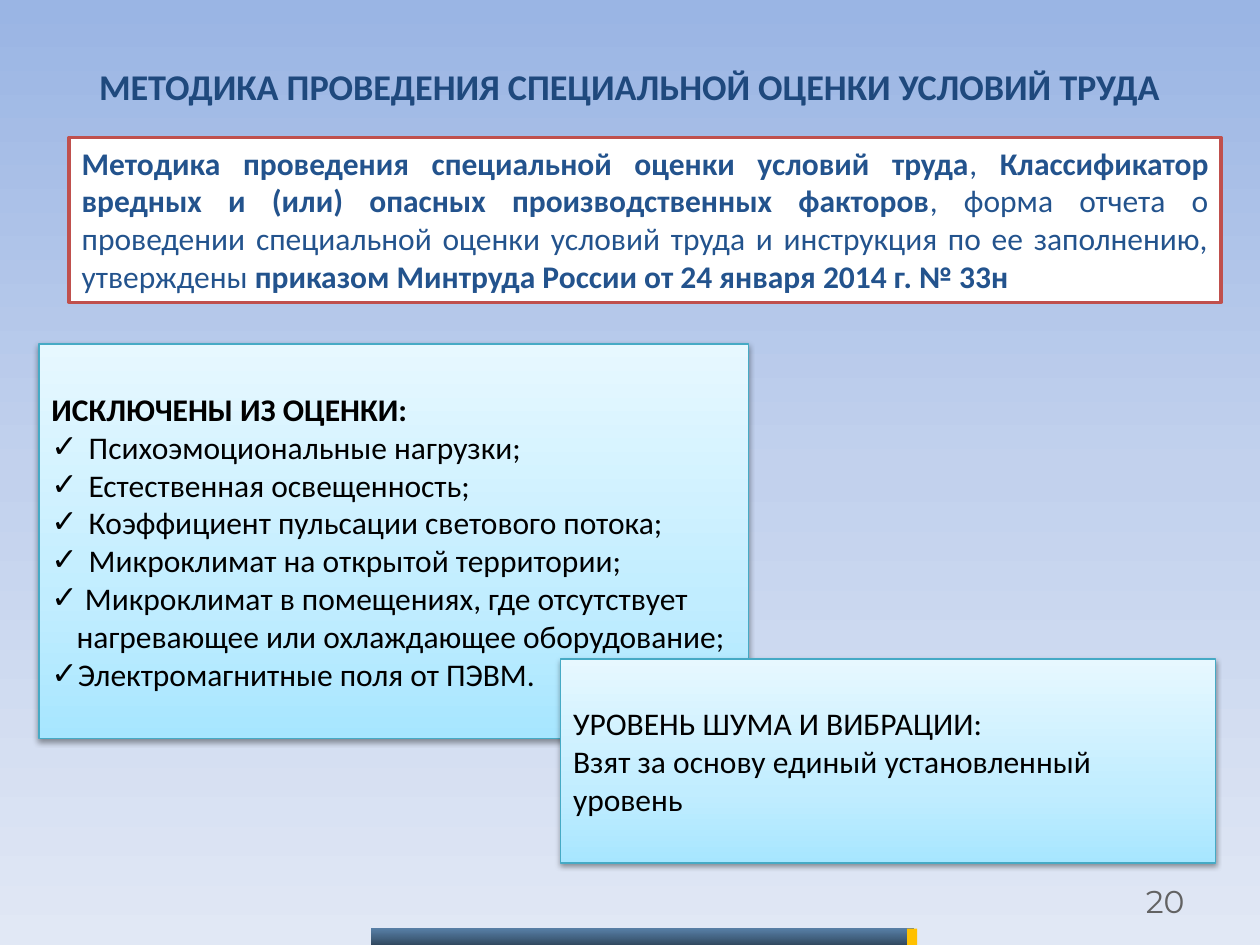
from dataclasses import dataclass

from lxml.etree import SubElement
from pptx import Presentation
from pptx.dml.color import RGBColor
from pptx.enum.shapes import MSO_SHAPE
from pptx.enum.text import MSO_ANCHOR, PP_ALIGN
from pptx.oxml.ns import qn
from pptx.util import Inches, Pt


@dataclass(frozen=True)
class Theme:
    # Gradient stops: position %, colour, opacity %
    backdrop: tuple = ((0, "9AB5E4", 100), (50, "C2D1ED", 100), (100, "E1E8F5", 100))
    panel: tuple = ((0, "A7E6FF", 100), (35, "C1EDFF", 100), (100, "E7F8FF", 100))
    footer: tuple = ((0, "003C73", 60), (100, "001C35", 80))
    panel_line: str = "46AAC5"
    order_line: str = "C0504D"
    accent: str = "FFC000"
    white: str = "FFFFFF"
    heading: str = "1F497D"
    order_text: str = "23538D"
    text: str = "000000"
    number: str = "626262"
    body_font: str = "Calibri"
    number_font: str = "Montserrat"
    heading_size: float = 20.7
    body_size: float = 18


THEME = Theme()


def set_format(target, values):
    for name, value in values.items():
        setattr(target, name, value)


def add_node(parent, tag, **attributes):
    return SubElement(parent, qn(tag), {k: str(v) for k, v in attributes.items()})


def add_colour(parent, colour, opacity):
    node = add_node(parent, "a:srgbClr", val=colour)
    if opacity < 100:
        add_node(node, "a:alpha", val=opacity * 1000)


def apply_gradient(fill, properties, stops, angle):
    """Swap the solid fill in the given properties for a gradient."""
    fill.solid()
    solid = properties.find(qn("a:solidFill"))
    gradient = add_node(properties, "a:gradFill", rotWithShape=1)
    stop_list = add_node(gradient, "a:gsLst")
    for position, colour, opacity in stops:
        stop = add_node(stop_list, "a:gs", pos=position * 1000)
        add_colour(stop, colour, opacity)
    add_node(gradient, "a:lin", ang=angle * 60000, scaled=0)
    properties.replace(solid, gradient)


def apply_shadow(shape):
    shape.shadow.inherit = False
    effects = shape._element.spPr.find(qn("a:effectLst"))
    shadow = add_node(effects, "a:outerShdw", blurRad=Pt(3.1), dist=Pt(1.6),
                      dir=90 * 60000, rotWithShape=0)
    add_colour(shadow, "000000", 38)


def add_rectangle(slide, box, fill=None, line=None, width=0.75):
    shape = slide.shapes.add_shape(MSO_SHAPE.RECTANGLE, *map(Inches, box))
    shape.shadow.inherit = False
    if fill:
        shape.fill.solid()
        shape.fill.fore_color.rgb = RGBColor.from_string(fill)
    if line:
        shape.line.color.rgb = RGBColor.from_string(line)
        shape.line.width = Pt(width)
    else:
        shape.line.fill.background()
    return shape


def add_run(paragraph, text, colour, bold=False, size=THEME.body_size, font=THEME.body_font):
    run = paragraph.add_run()
    run.text = text
    set_format(run.font, {"name": font, "size": Pt(size), "bold": bold})
    run.font.color.rgb = RGBColor.from_string(colour)


def add_check(paragraph, indent):
    properties = paragraph._p.get_or_add_pPr()
    properties.set("marL", str(Inches(indent)))
    properties.set("indent", str(-Inches(indent)))
    add_node(properties, "a:buFont", typeface=THEME.body_font)
    add_node(properties, "a:buChar", char="✓")


def add_label(slide, box, text, align, **style):
    label = slide.shapes.add_textbox(*map(Inches, box))
    set_format(label.text_frame, {"word_wrap": True, "vertical_anchor": MSO_ANCHOR.MIDDLE})
    paragraph = label.text_frame.paragraphs[0]
    paragraph.alignment = align
    add_run(paragraph, text, **style)


def add_order(slide, box, parts):
    """Framed, justified reference to the order; parts are (text, bold)."""
    frame = add_rectangle(slide, box, THEME.white, THEME.order_line, 2).text_frame
    set_format(frame, {"word_wrap": True, "vertical_anchor": MSO_ANCHOR.TOP})
    paragraph = frame.paragraphs[0]
    paragraph.alignment = PP_ALIGN.JUSTIFY
    for text, bold in parts:
        add_run(paragraph, text, THEME.order_text, bold)


def add_panel(slide, box, lines):
    """Shaded panel; lines are (text, bold, check indent or None)."""
    panel = add_rectangle(slide, box, line=THEME.panel_line)
    apply_gradient(panel.fill, panel._element.spPr, THEME.panel, 270)
    apply_shadow(panel)
    frame = panel.text_frame
    set_format(frame, {"word_wrap": True, "vertical_anchor": MSO_ANCHOR.MIDDLE})
    for index, (text, bold, indent) in enumerate(lines):
        paragraph = frame.add_paragraph() if index else frame.paragraphs[0]
        paragraph.alignment = PP_ALIGN.LEFT
        if indent:
            add_check(paragraph, indent)
        add_run(paragraph, text, THEME.text, bold)


def add_footer(slide, box):
    left, top, width, height = box
    bar = add_rectangle(slide, box)
    apply_gradient(bar.fill, bar._element.spPr, THEME.footer, 90)
    add_rectangle(slide, (left + width - 0.05, top, 0.08, height), THEME.accent)


def main():
    presentation = Presentation()
    set_format(presentation, {"slide_width": Inches(10), "slide_height": Inches(7.5)})
    slide = presentation.slides.add_slide(presentation.slide_layouts[6])

    # Background
    background = slide.background.fill
    background.solid()
    properties = slide._element.cSld.find(qn("p:bg")).find(qn("p:bgPr"))
    apply_gradient(background, properties, THEME.backdrop, 90)

    # Page number, heading and footer
    add_label(slide, (7.17, 6.95, 2.33, 0.4), "20", PP_ALIGN.RIGHT,
              colour=THEME.number, font=THEME.number_font)
    add_label(slide, (0.27, 0.3, 9.45, 0.77),
              "МЕТОДИКА ПРОВЕДЕНИЯ СПЕЦИАЛЬНОЙ ОЦЕНКИ УСЛОВИЙ ТРУДА", PP_ALIGN.CENTER,
              colour=THEME.heading, bold=True, size=THEME.heading_size)
    add_footer(slide, (2.95, 7.37, 4.3, 0.13))

    # Factors left out of the assessment
    add_panel(slide, (0.31, 2.73, 5.63, 3.13), [
        ("ИСКЛЮЧЕНЫ ИЗ ОЦЕНКИ:", True, None),
        (" Психоэмоциональные нагрузки;", False, 0.24),
        (" Естественная освещенность;", False, 0.24),
        (" Коэффициент пульсации светового потока;", False, 0.24),
        (" Микроклимат на открытой территории;", False, 0.24),
        (" Микроклимат в помещениях, где отсутствует нагревающее или "
         "охлаждающее оборудование;", False, 0.2),
        ("Электромагнитные поля от ПЭВМ.", False, 0.2),
    ])

    # Noise and vibration
    add_panel(slide, (4.45, 5.23, 5.2, 1.62), [
        ("УРОВЕНЬ ШУМА И ВИБРАЦИИ:", False, None),
        ("Взят за основу единый установленный уровень", False, None),
    ])

    # Approving order
    add_order(slide, (0.55, 1.09, 9.14, 1.31), [
        ("Методика проведения специальной оценки условий труда", True),
        (", ", False),
        ("Классификатор вредных и (или) опасных производственных факторов", True),
        (", форма отчета о проведении специальной оценки условий труда и "
         "инструкция по ее заполнению, утверждены ", False),
        ("приказом Минтруда России от 24 января 2014 г. № 33н", True),
    ])

    presentation.save("out.pptx")


if __name__ == "__main__":
    main()
